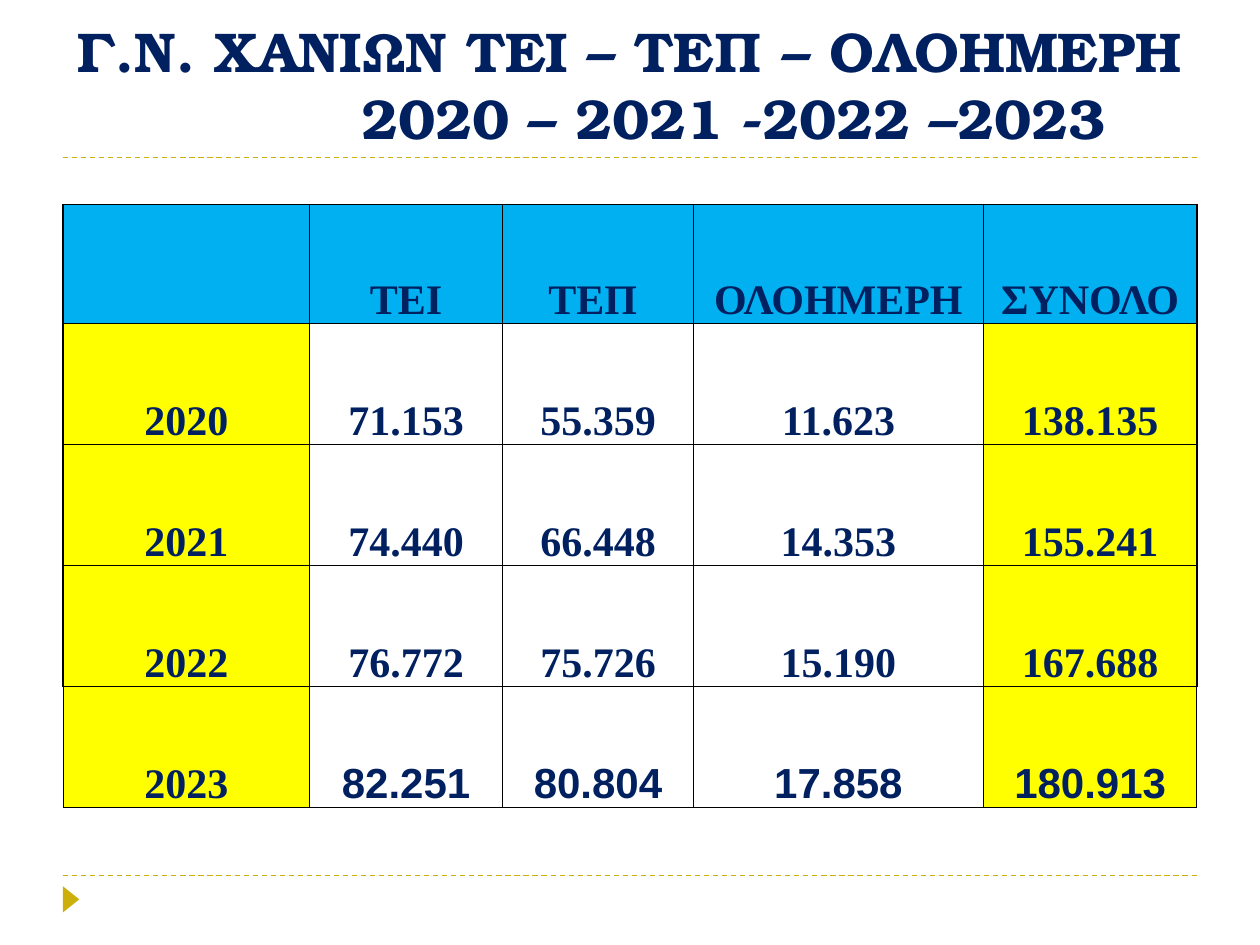
"""Build the slide of yearly outpatient, emergency and all-day clinic visits."""
import pptx
import pptx.dml.color
import pptx.enum.dml
import pptx.enum.shapes
import pptx.enum.text
import pptx.oxml
import pptx.oxml.ns
import pptx.util
from lxml import etree

Pt = pptx.util.Pt
NAVY, GOLD, BLUE, YELLOW, BLACK = "002060", "CCAF0A", "00B0F0", "FFFF00", "000000"
LEFT, WIDTH = 36, 648
TITLE_LINES = [("Γ.Ν. ΧΑΝΙΩΝ ΤΕΙ – ΤΕΠ – ΟΛΟΗΜΕΡΗ", 0), ("2020 – 2021 -2022 –2023", 119)]
COLUMN_WIDTHS = [140.9, 110.3, 109.1, 165.7, 122]
ROW_HEIGHTS = [68] + [69.2] * 4
ROWS = [
    ["", "ΤΕΙ", "ΤΕΠ ", "ΟΛΟΗΜΕΡΗ", "ΣΥΝΟΛΟ"],
    ["2020", "71.153", "55.359", "11.623", "138.135"],
    ["2021", "74.440", "66.448", "14.353", "155.241"],
    ["2022", "76.772", "75.726", "15.190", "167.688"],
    ["2023", "82.251", "80.804", "17.858", "180.913"],
]


def color(value):
    return pptx.dml.color.RGBColor.from_string(value)


def apply(target, values):
    for name, value in values.items():
        setattr(target, name, value)


class SlideBuilder:
    def __init__(self, slide):
        self.slide = slide
        self.title_font = {"name": "TeX Gyre Bonum", "size": Pt(32), "bold": True}
        self.cell_font = {"name": "Times New Roman", "size": Pt(24), "bold": True}
        self.cell_format = {
            "margin_left": Pt(0.72), "margin_right": Pt(0.72),
            "margin_top": Pt(0.72), "margin_bottom": 0,
            "vertical_anchor": pptx.enum.text.MSO_ANCHOR.BOTTOM,
        }

    def centered_text(self, paragraph, text, font):
        paragraph.text = text
        paragraph.alignment = pptx.enum.text.PP_ALIGN.CENTER
        apply(paragraph.font, font)
        paragraph.font.color.rgb = color(NAVY)

    def title(self, lines, top, height):
        shape = self.slide.shapes.title
        apply(shape, {"left": Pt(LEFT), "top": Pt(top), "width": Pt(WIDTH), "height": Pt(height)})
        frame = shape.text_frame
        apply(frame, {
            "margin_left": 0, "margin_right": 0, "word_wrap": True,
            "auto_size": pptx.enum.text.MSO_AUTO_SIZE.NONE,
            "vertical_anchor": pptx.enum.text.MSO_ANCHOR.BOTTOM,
        })
        for index, (text, indent) in enumerate(lines):
            paragraph = frame.add_paragraph() if index else frame.paragraphs[0]
            self.centered_text(paragraph, text, self.title_font)
            paragraph._p.get_or_add_pPr().set("marL", str(Pt(indent)))

    def rule(self, top):
        line = self.slide.shapes.add_connector(
            pptx.enum.shapes.MSO_CONNECTOR.STRAIGHT,
            Pt(LEFT), Pt(top), Pt(LEFT + WIDTH), Pt(top))
        apply(line.line, {"width": Pt(0.75), "dash_style": pptx.enum.dml.MSO_LINE.DASH})
        line.line.color.rgb = color(GOLD)
        etree.SubElement(line._element.spPr, pptx.oxml.ns.qn("a:effectLst"))

    def marker(self, left, top, width, height):
        shape = self.slide.shapes.add_shape(
            pptx.enum.shapes.MSO_SHAPE.ISOSCELES_TRIANGLE,
            Pt(left), Pt(top), Pt(width), Pt(height))
        shape.rotation = 90
        shape.shadow.inherit = False
        shape.fill.solid()
        shape.fill.fore_color.rgb = color(GOLD)
        shape.line.fill.background()

    def borders(self, cell, widths):
        properties = cell._tc.get_or_add_tcPr()
        for side, width in widths.items():
            properties.append(pptx.oxml.parse_xml(
                f'<a:ln{side} {pptx.oxml.ns.nsdecls("a")} w="{Pt(width)}">'
                f'<a:solidFill><a:srgbClr val="{BLACK}"/></a:solidFill></a:ln{side}>'))

    def table(self, rows, top):
        table = self.slide.shapes.add_table(
            len(rows), len(COLUMN_WIDTHS), Pt(LEFT), Pt(top),
            Pt(WIDTH), Pt(sum(ROW_HEIGHTS))).table
        apply(table, {"first_row": False, "horz_banding": False})
        for column, width in zip(table.columns, COLUMN_WIDTHS):
            column.width = Pt(width)
        for row, height in zip(table.rows, ROW_HEIGHTS):
            row.height = Pt(height)
        last_row, last_column = len(rows) - 1, len(COLUMN_WIDTHS) - 1
        for r, values in enumerate(rows):
            for c, text in enumerate(values):
                cell = table.cell(r, c)
                apply(cell, self.cell_format)
                font = dict(self.cell_font)
                if r == last_row and c > 0:
                    font["name"] = "Arial"
                self.centered_text(cell.text_frame.paragraphs[0], text, font)
                self.borders(cell, {
                    "L": 1 if c == 0 and r < last_row else 0.5,
                    "R": 1 if c == last_column and r < last_row else 0.5,
                    "T": 1 if r == 0 else 0.5,
                    "B": 0.5,
                })
                if r == 0 or c in (0, last_column):
                    cell.fill.solid()
                    cell.fill.fore_color.rgb = color(YELLOW if r else BLUE)
                else:
                    cell.fill.background()


def main():
    presentation = pptx.Presentation()
    apply(presentation, {"slide_width": Pt(720), "slide_height": Pt(540)})
    builder = SlideBuilder(presentation.slides.add_slide(presentation.slide_layouts[5]))
    for top in (500.4, 90):
        builder.rule(top)
    builder.marker(33.1, 509.2, 15, 9.4)
    builder.title(TITLE_LINES, 18, 72)
    builder.table(ROWS, 116.8)
    presentation.save("out.pptx")


if __name__ == "__main__":
    main()
